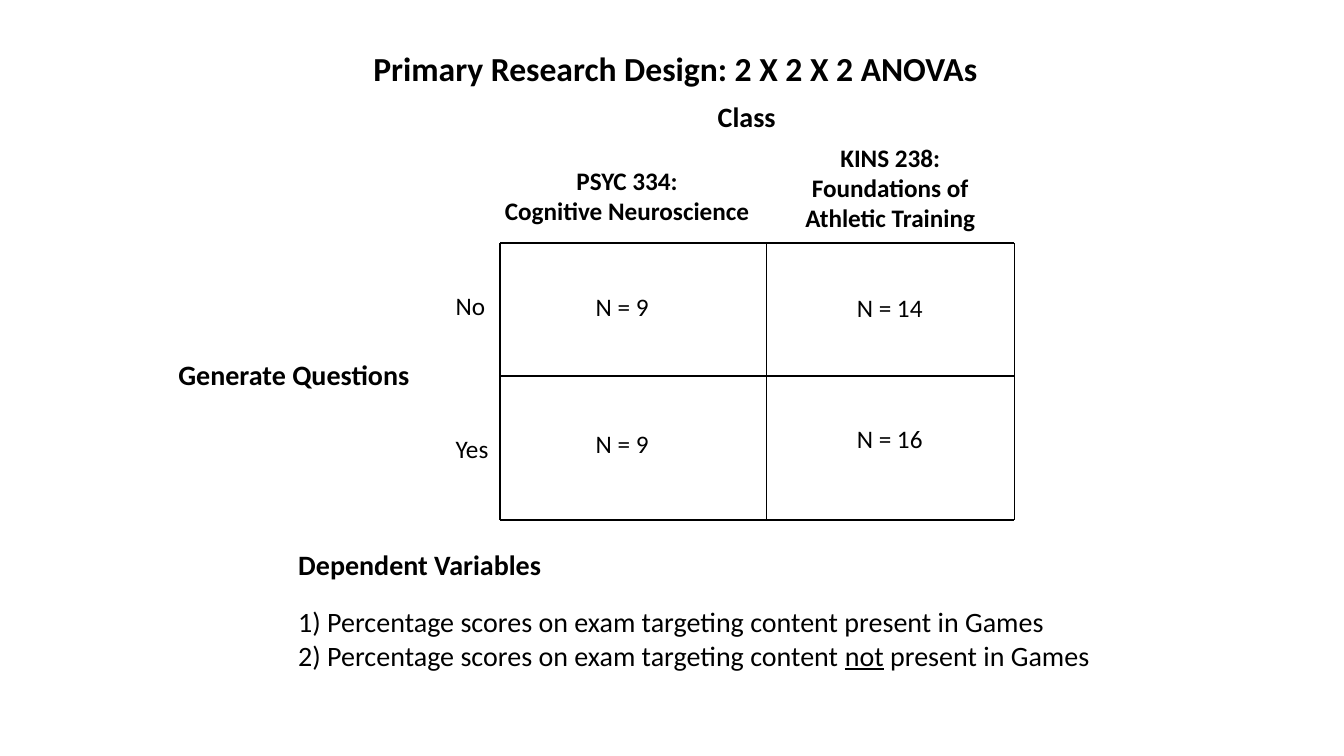
from lxml import etree
from pptx import Presentation
from pptx.dml.color import RGBColor
from pptx.enum.shapes import MSO_CONNECTOR as CONNECTOR
from pptx.enum.text import MSO_ANCHOR as ANCHOR, PP_ALIGN as ALIGN
from pptx.oxml.ns import qn
from pptx.util import Inches, Pt

# Content: a label is (lines, (left, top, width, height))
TITLE = (["Primary Research Design: 2 X 2 X 2 ANOVAs"], (2.2, 0.08, 9, 1.25))
FACTORS = [
    (["Generate Questions"], (1.67, 3.5, 2.52, 0.44)),
    (["Class"], (7.02, 0.94, 0.78, 0.44)),
]
CLASSES = [
    (["PSYC 334:", "Cognitive Neuroscience"], (4.9, 1.59, 2.64, 0.71)),
    (["KINS 238:", "Foundations of", "Athletic Training"], (7.88, 1.36, 1.9, 1.01)),
]
LEVELS_AND_COUNTS = [
    (["No"], (4.42, 2.83, 0.5, 0.4)),
    (["Yes"], (4.42, 4.25, 0.53, 0.4)),
    (["N = 9"], (5.81, 2.84, 0.73, 0.4)),
    (["N = 9"], (5.81, 4.2, 0.73, 0.4)),
    (["N = 14"], (8.4, 2.85, 0.86, 0.4)),
    (["N = 16"], (8.4, 4.15, 0.86, 0.4)),
]
VARIABLES_HEADING = "Dependent Variables"
VARIABLES = [
    "1) Percentage scores on exam targeting content present in Games",
    "2) Percentage scores on exam targeting content ",
]
UNDERLINED, ENDING = "not", " present in Games"
VARIABLES_BOX = (2.86, 5.38, 8.13, 1.38)

# Design grid: edges of the columns and rows
COLUMN_EDGES = (4.96, 7.6, 10.06)
ROW_EDGES = (2.41, 3.73, 5.16)

# Formats
BLACK = RGBColor(0, 0, 0)
TITLE_FONT = {"size": Pt(24), "bold": True}
FACTOR_FONT = {"size": Pt(20), "bold": True}
CLASS_FONT = {"size": Pt(18), "bold": True}
CELL_FONT = {"size": Pt(18), "bold": False}
VARIABLE_FONT = {"size": Pt(20), "bold": False}
HEADING_GAP = Pt(17)


def add_run(paragraph, text, font_values):
    run = paragraph.add_run()
    run.text = text
    run.font.color.rgb = BLACK
    for name, value in {"name": "Calibri", **font_values}.items():
        setattr(run.font, name, value)


def add_label(slide, lines, box, font_values, align=ALIGN.LEFT, wrap=False):
    shape = slide.shapes.add_textbox(*map(Inches, box))
    frame = shape.text_frame
    frame.word_wrap = wrap
    for index, line in enumerate(lines):
        paragraph = frame.add_paragraph() if index else frame.paragraphs[0]
        paragraph.alignment = align
        add_run(paragraph, line, font_values)
    return frame


def add_rule(slide, start, end):
    line = slide.shapes.add_connector(
        CONNECTOR.STRAIGHT, *map(Inches, (*start, *end)))
    line.line.color.rgb = BLACK
    line.line.width = Pt(1)
    etree.SubElement(line._element.spPr, qn("a:effectLst"))


def main():
    presentation = Presentation()
    presentation.slide_width = Inches(13.33)
    presentation.slide_height = Inches(7.5)
    slide = presentation.slides.add_slide(presentation.slide_layouts[6])

    # Title
    title = add_label(slide, *TITLE, TITLE_FONT, ALIGN.CENTER, wrap=True)
    title.vertical_anchor = ANCHOR.MIDDLE
    title.paragraphs[0].line_spacing = 0.9

    # Grid
    for row in ROW_EDGES:
        add_rule(slide, (COLUMN_EDGES[0], row), (COLUMN_EDGES[-1], row))
    for column in COLUMN_EDGES:
        add_rule(slide, (column, ROW_EDGES[0]), (column, ROW_EDGES[-1]))

    # Labels around and inside the grid
    for labels, font_values, align in (
        (FACTORS, FACTOR_FONT, ALIGN.LEFT),
        (CLASSES, CLASS_FONT, ALIGN.CENTER),
        (LEVELS_AND_COUNTS, CELL_FONT, ALIGN.LEFT),
    ):
        for lines, box in labels:
            add_label(slide, lines, box, font_values, align)

    # Dependent variables
    variables = add_label(slide, [VARIABLES_HEADING], VARIABLES_BOX, FACTOR_FONT)
    for text in VARIABLES:
        paragraph = variables.add_paragraph()
        add_run(paragraph, text, VARIABLE_FONT)
    variables.paragraphs[1].space_before = HEADING_GAP
    add_run(paragraph, UNDERLINED, {**VARIABLE_FONT, "underline": True})
    add_run(paragraph, ENDING, VARIABLE_FONT)

    presentation.save("out.pptx")


if __name__ == "__main__":
    main()
